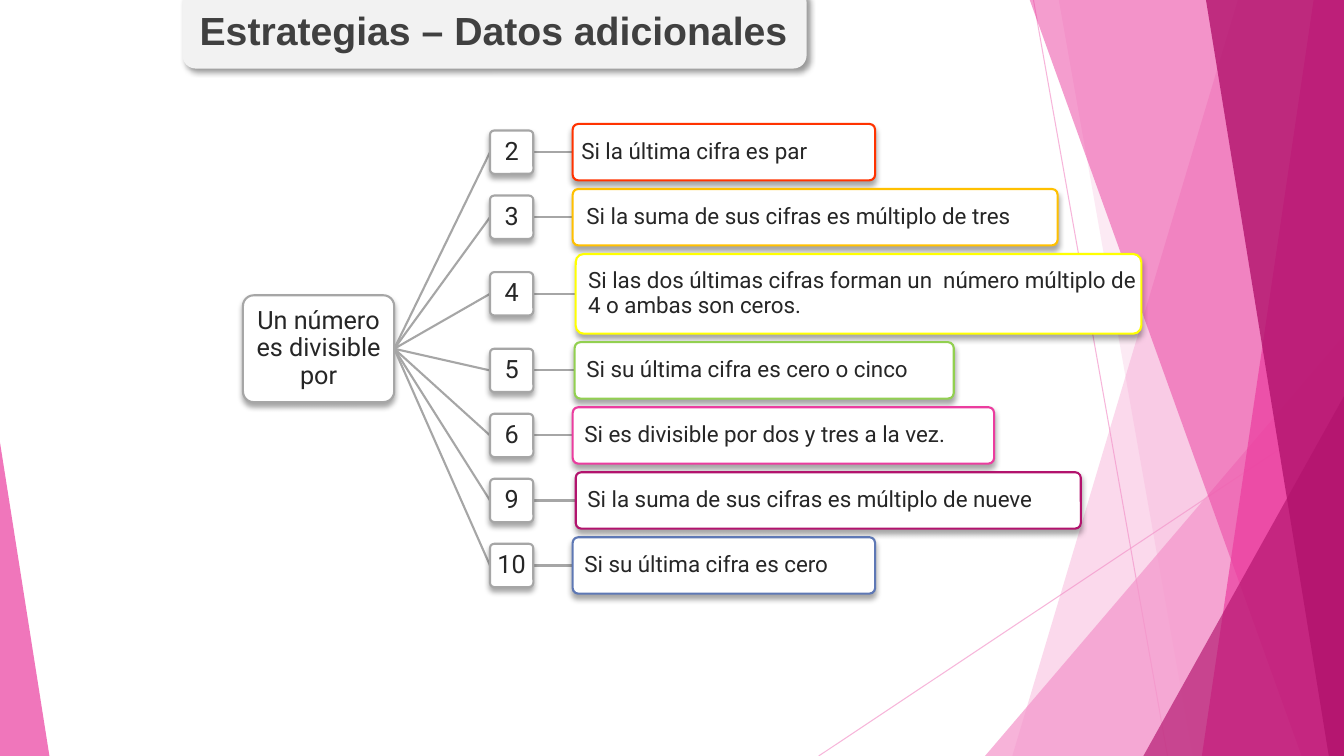
from dataclasses import dataclass
from lxml import etree
from pptx import Presentation
from pptx import util as u
from pptx.dml.color import RGBColor
from pptx.enum import shapes, text
from pptx.oxml import ns

TITLE = "Estrategias – Datos adicionales"
ROOT = "Un número es divisible por"
RULES = [
    # divisor, rule, outline, left, width, rows of height, indent
    ("2", "Si la última cifra es par", "FF3300", 5.68, 3.0, 0.56, 0.06),
    ("3", "Si la suma de sus cifras es múltiplo de tres", "FFC000", 5.68, 4.81, 0.56, 0.11),
    ("4", "Si las dos últimas cifras forman un  número múltiplo de 4 o ambas son ceros.",
     "FFFF00", 5.71, 5.61, 0.79, 0.09),
    ("5", "Si su última cifra es cero o cinco", "92D050", 5.7, 3.76, 0.56, 0.09),
    ("6", "Si es divisible por dos y tres a la vez.", "EB3D9F", 5.68, 4.18, 0.56, 0.09),
    ("9", "Si la suma de sus cifras es múltiplo de nueve", "B2136D", 5.71, 5.01, 0.56, 0.09),
    ("10", "Si su última cifra es cero", "5E78B5", 5.68, 3.0, 0.56, 0.09),
]


@dataclass(frozen=True)
class Theme:
    pale: str = "F496CB"
    pink: str = "EB3D9F"
    deep: str = "B2136D"
    white: str = "FFFFFF"
    panel: str = "F2F2F2"
    grey: str = "A6A6A6"
    ink: str = "262626"
    title_ink: str = "404040"
    title_font: str = "Arial"
    body_font: str = "Roboto"
    title_size: int = 28
    node_size: int = 18
    rule_size: int = 16


T = Theme()
W, H = 13.33, 7.5
TOP, BOTTOM = 1.23, 5.89
ROOT_BOX = (2.41, 2.93, 1.5, 1.06)
NODE_LEFT, NODE = 4.86, 0.43
PANEL = (1.81, -0.11, 6.19, 0.79)
TITLE_BOX = (1.88, 0.01, 6.1, 0.57)
RAYS = [((10.25, 0), (11.58, H)), ((W, 4.03), (8.12, H))]
EDGE = -0.01
FACETS = [
    ("band", (12.28, 10.04), T.pale, 36),
    ("band", (10.5, 11.83), T.pale, 20),
    ("triangle", (9.77, 3.33, W - 9.77, H - 3.33, 1), T.pale, 72),
    ("band", (10.21, 12.91), T.pink, 50),
    ("band", (13.03, 11.92), T.pink, 70),
    ("band", (11.96, 13.18), T.deep, 80),
    ("triangle", (11.34, 3.93, W - 11.34, H - 3.93, 1), T.deep, 66),
    ("triangle", (0, 4.39, 0.49, H - 4.39, 0), T.pink, 70),
]


def rgb(c):
    return RGBColor.from_string(c)


def inches(values):
    return [u.Inches(v) for v in values]


def fade(shape, percent):
    for c in shape.element.spPr.iter(ns.qn("a:srgbClr")):
        etree.SubElement(c, ns.qn("a:alpha"), val=str(percent * 1000))


def cast_shadow(shape, percent, angle):
    shape.shadow.inherit = False
    effects = shape.element.spPr.find(ns.qn("a:effectLst"))
    shadow = etree.SubElement(effects, ns.qn("a:outerShdw"), blurRad=str(u.Pt(4)),
                              dist=str(u.Pt(3)), dir=str(angle * 60000),
                              algn="ctr", rotWithShape="0")
    c = etree.SubElement(shadow, ns.qn("a:srgbClr"), val="000000")
    etree.SubElement(c, ns.qn("a:alpha"), val=str(percent * 1000))


def line(s, start, end, color, width):
    cn = s.shapes.add_connector(shapes.MSO_CONNECTOR.STRAIGHT, *inches(start + end))
    cn.line.color.rgb = rgb(color)
    cn.line.width = u.Pt(width)
    etree.SubElement(cn.element.spPr, ns.qn("a:effectLst"))
    return cn


def facet(s, kind, where, color, percent):
    if kind == "band":
        top_x, bottom_x = where
        corners = [(W, EDGE), (W, H), (bottom_x, H)]
        fb = s.shapes.build_freeform(*inches((top_x, EDGE)))
        fb.add_line_segments([inches(c) for c in corners])
        sp = fb.convert_to_shape()
    else:
        sp = s.shapes.add_shape(shapes.MSO_SHAPE.ISOSCELES_TRIANGLE, *inches(where[:4]))
        sp.adjustments[0] = where[4]
    sp.shadow.inherit = False
    sp.fill.solid()
    sp.fill.fore_color.rgb = rgb(color)
    sp.line.fill.background()
    fade(sp, percent)


def rounded(s, box, fill, radius):
    sp = s.shapes.add_shape(shapes.MSO_SHAPE.ROUNDED_RECTANGLE, *inches(box))
    sp.adjustments[0] = radius
    sp.fill.solid()
    sp.fill.fore_color.rgb = rgb(fill)
    return sp


def card(s, box, words, outline, size, align, indent=0):
    sp = rounded(s, box, T.white, 0.1)
    sp.line.color.rgb = rgb(outline)
    sp.line.width = u.Pt(1.5)
    cast_shadow(sp, 35, 90)
    tf = sp.text_frame
    tf.word_wrap = True
    tf.vertical_anchor = text.MSO_ANCHOR.MIDDLE
    tf.margin_left = tf.margin_right = tf.margin_top = tf.margin_bottom = u.Inches(0.01)
    p = tf.paragraphs[0]
    p.text = words
    p.alignment = align
    p.line_spacing = 0.9
    p.font.name, p.font.size = T.body_font, u.Pt(size)
    p.font.color.rgb = rgb(T.ink)
    if indent:
        p._p.get_or_add_pPr().set("marL", str(u.Inches(indent)))


def heading(s):
    sp = rounded(s, PANEL, T.panel, 0.167)
    sp.line.fill.background()
    cast_shadow(sp, 40, 45)
    title = s.shapes.title
    s.shapes.element.append(title.element)
    title.left, title.top, title.width, title.height = inches(TITLE_BOX)
    tf = title.text_frame
    tf.word_wrap = False
    tf.vertical_anchor = text.MSO_ANCHOR.MIDDLE
    p = tf.paragraphs[0]
    p.text = TITLE
    p.alignment = text.PP_ALIGN.LEFT
    p.font.name, p.font.size, p.font.bold = T.title_font, u.Pt(T.title_size), True
    p.font.color.rgb = rgb(T.title_ink)


def tree(s):
    x, y, w, h = ROOT_BOX
    hub = (x + w, y + h / 2)
    card(s, ROOT_BOX, ROOT, T.grey, T.node_size, text.PP_ALIGN.CENTER)
    gap = (BOTTOM - TOP - sum(rule[5] for rule in RULES)) / (len(RULES) - 1)
    top = TOP
    for divisor, words, outline, left, width, height, indent in RULES:
        mid = top + height / 2
        line(s, hub, (NODE_LEFT, mid), T.grey, 1.5)
        line(s, (NODE_LEFT + NODE, mid), (left, mid), T.grey, 1.5)
        card(s, (NODE_LEFT, mid - NODE / 2, NODE, NODE), divisor, T.grey,
             T.node_size, text.PP_ALIGN.CENTER)
        card(s, (left, top, width, height), words, outline,
             T.rule_size, text.PP_ALIGN.LEFT, indent)
        top += height + gap


def main():
    prs = Presentation()
    prs.slide_width, prs.slide_height = inches((W, H))
    s = prs.slides.add_slide(prs.slide_layouts[5])
    for start, end in RAYS:
        fade(line(s, start, end, T.pale, 0.75), 70)
    for item in FACETS:
        facet(s, *item)
    heading(s)
    tree(s)
    prs.save("out.pptx")


if __name__ == "__main__":
    main()
